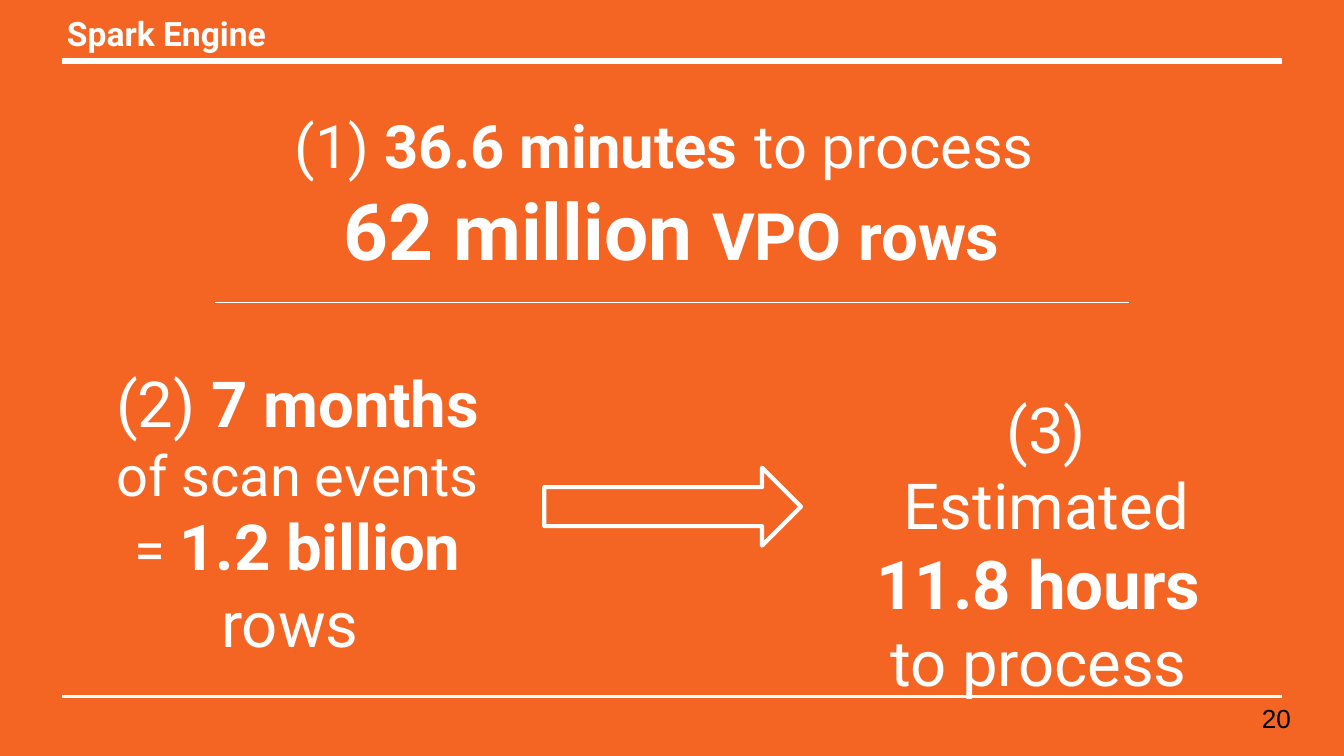
from dataclasses import dataclass

from lxml.etree import SubElement
from pptx import Presentation
from pptx.dml.color import RGBColor
from pptx.enum.shapes import MSO_CONNECTOR, MSO_SHAPE
from pptx.enum.text import MSO_ANCHOR, PP_ALIGN
from pptx.oxml.ns import qn
from pptx.util import Inches, Pt


@dataclass(frozen=True)
class Theme:
    orange: RGBColor = RGBColor(0xF4, 0x65, 0x24)
    white: RGBColor = RGBColor(0xFF, 0xFF, 0xFF)
    black: RGBColor = RGBColor(0, 0, 0)
    font: str = "Roboto"
    number_font: str = "Arial"
    number: int = 14
    title: int = 18
    small: int = 30
    lead: int = 32
    body: int = 34
    rows: int = 35
    hours: int = 36
    million: int = 42


T = Theme()
COLS, ROWS = 100, 56.25
prs = Presentation()
prs.slide_width = Inches(10)
prs.slide_height = prs.slide_width * 9 // 16
COL, ROW = prs.slide_width / COLS, prs.slide_height / ROWS

s = prs.slides.add_slide(prs.slide_layouts[6])
s.background.fill.solid()
s.background.fill.fore_color.rgb = T.orange


def grid(x, y, w, h):
    """Turn columns and rows into slide lengths."""
    return round(x * COL), round(y * ROW), round(w * COL), round(h * ROW)


def add_text(cell, paragraphs, align=PP_ALIGN.CENTER, anchor=MSO_ANCHOR.TOP,
             font=T.font, color=T.white):
    """Add a text box; each paragraph is a list of (text, size, bold) runs."""
    tf = s.shapes.add_textbox(*grid(*cell)).text_frame
    frame = {"word_wrap": True, "vertical_anchor": anchor}
    frame |= {f"margin_{side}": Inches(0.1) for side in ("left", "top", "right", "bottom")}
    for name, value in frame.items():
        setattr(tf, name, value)
    for i, runs in enumerate(paragraphs):
        p = tf.paragraphs[0] if i == 0 else tf.add_paragraph()
        p.alignment = align
        for text, size, bold in runs:
            r = p.add_run()
            r.text = text
            for name, value in {"name": font, "size": Pt(size), "bold": bold}.items():
                setattr(r.font, name, value)
            r.font.color.rgb = color


# Header and footer rules, and the divider under the first figure
for left, right, y, weight in [(4.65, 95.4, 4.53, 3), (4.65, 95.4, 51.8, 1.5),
                               (16, 84, 22.5, 0.75)]:
    x, top, w, _ = grid(left, y, right - left, 0)
    rule = s.shapes.add_connector(MSO_CONNECTOR.STRAIGHT, x, top, x + w, top)
    rule.line.color.rgb = T.white
    rule.line.width = Pt(weight)
    SubElement(rule._element.spPr, qn("a:effectLst"))

# Title and the three findings
add_text((4, 0, 72.2, 8.4), [[("Spark Engine", T.title, True)]], PP_ALIGN.LEFT)
add_text((4.65, 6.7, 90.7, 15), [
    [("(1) ", T.lead, False), ("36.6 minutes", T.lead, True),
     (" ", T.rows, True), ("to process ", T.lead, False)],
    [("62 million ", T.million, True), ("VPO rows", T.rows, True)],
])
add_text((7.2, 26.1, 29.9, 23.3), [
    [("(2) ", T.body, False), ("7 months ", T.body, True)],
    [("of scan events = ", T.small, False), ("1.2 billion ", T.body, True),
     ("rows ", T.body, False)],
])
add_text((62.9, 28, 29.9, 19.4), [
    [("(3) Estimated ", T.body, False), ("11.8 hours", T.hours, True),
     (" ", T.body, False)],
    [("to process ", T.body, False)],
])

# Arrow from the workload to the estimate
arrow = s.shapes.add_shape(MSO_SHAPE.RIGHT_ARROW, *grid(40.5, 34.8, 19.1, 5.8))
arrow.shadow.inherit = False
arrow.fill.solid()
arrow.fill.fore_color.rgb = T.orange
arrow.line.color.rgb = T.white
arrow.line.width = Pt(2.25)

# Page number
add_text((92.9, 51.3, 6, 4.3), [[("20", T.number, False)]], PP_ALIGN.LEFT,
         MSO_ANCHOR.MIDDLE, T.number_font, T.black)

prs.save("out.pptx")
